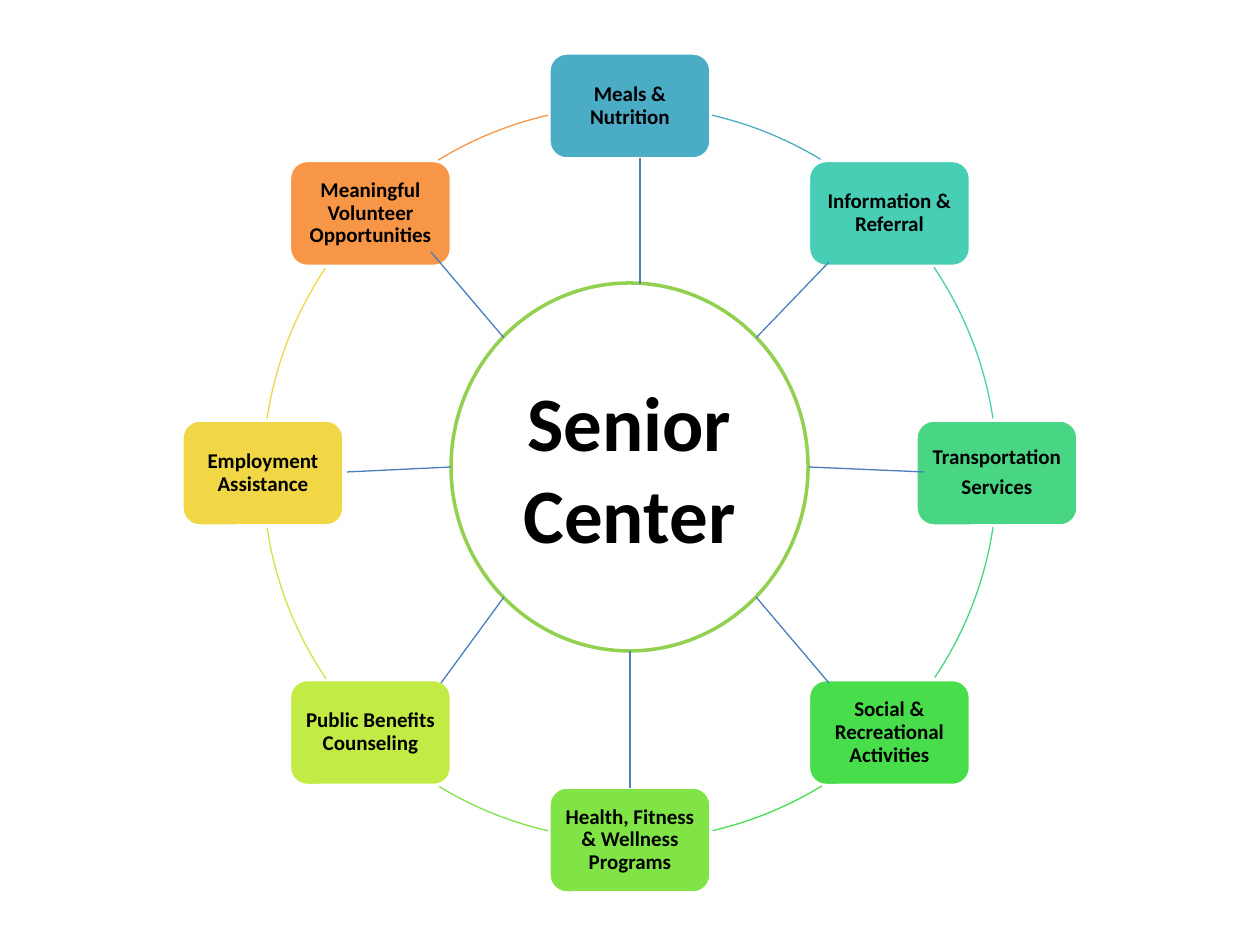
from math import cos, radians, sin

from lxml import etree
from pptx import Presentation
from pptx import util as u
from pptx.dml.color import RGBColor
from pptx.enum import shapes, text
from pptx.oxml.ns import qn

PX = u.Inches(1) / 126
theme = {
    "font": "Calibri", "ink": "000000", "paper": "FFFFFF",
    "ring": "92D050", "spoke": "4B7EBC",
    "hub": 44, "label": 12, "bold": 2, "thin": 0.75,
}
nodes = [
    ("4BACC6", ["Meals & Nutrition"]),
    ("49CEB6", ["Information & Referral"]),
    ("48D684", ["Transportation", "Services"]),
    ("47DD4B", ["Social & Recreational Activities"]),
    ("80E446", ["Health, Fitness & Wellness Programs"]),
    ("C3EB46", ["Public Benefits Counseling"]),
    ("F1D746", ["Employment Assistance"]),
    ("F79646", ["Meaningful Volunteer Opportunities"]),
]
gaps = [(12.9, 31.5), (10.9, 36.5), (8.5, 34.1), (13.5, 32.1)]
spokes = [
    (504, 338, 431, 252), (640, 158, 640, 284),
    (756, 338, 829, 262), (809, 467, 924, 472),
    (756, 597, 829, 683), (630, 651, 630, 788),
    (504, 597, 441, 683), (451, 467, 347, 472),
]
mid_x, mid_y, radius = 630, 473, 367
wide, high = 162, 106

deck = Presentation()
deck.slide_width, deck.slide_height = u.Inches(10), u.Inches(7.5)
slide = deck.slides.add_slide(deck.slide_layouts[6])


def draw(kind, x, y, w, h, fill, line, width):
    shape = slide.shapes.add_shape(kind, *(round(n * PX) for n in (x, y, w, h)))
    shape.shadow.inherit = False
    if fill:
        shape.fill.solid()
        shape.fill.fore_color.rgb = RGBColor.from_string(fill)
    else:
        shape.fill.background()
    shape.line.color.rgb = RGBColor.from_string(line)
    shape.line.width = u.Pt(width)
    return shape


def write(shape, lines, size):
    frame = shape.text_frame
    frame.word_wrap = True
    frame.vertical_anchor = text.MSO_ANCHOR.MIDDLE
    for i, line in enumerate(lines):
        para = frame.add_paragraph() if i else frame.paragraphs[0]
        para.alignment = text.PP_ALIGN.CENTER
        run = para.add_run()
        run.text = line
        run.font.name = theme["font"]
        run.font.size = u.Pt(size)
        run.font.bold = True
        run.font.color.rgb = RGBColor.from_string(theme["ink"])
    return frame


for i, (color, lines) in enumerate(nodes):
    angle = 45 * i - 90
    x = mid_x + radius * cos(radians(angle)) - wide / 2
    y = mid_y + radius * sin(radians(angle)) - high / 2
    box = draw(shapes.MSO_SHAPE.ROUNDED_RECTANGLE, x, y, wide, high,
               color, theme["paper"], theme["bold"])
    frame = write(box, lines, theme["label"])
    frame.margin_left = frame.margin_right = round(6 * PX)
    frame.margin_top = frame.margin_bottom = round(6 * PX)
    for para in frame.paragraphs:
        para.line_spacing = 0.9
        para.space_after = u.Pt(4.2)

    arc = draw(shapes.MSO_SHAPE.ARC, mid_x - radius, mid_y - radius,
               2 * radius, 2 * radius, None, color, theme["thin"])
    for k, gap in enumerate(gaps[i % 4]):
        arc.adjustments[k] = (angle + gap) % 360 * 0.6

hub = draw(shapes.MSO_SHAPE.FLOWCHART_CONNECTOR, 451, 283, 357, 368,
           theme["paper"], theme["ring"], theme["bold"])
write(hub, ["Senior Center"], theme["hub"])

for ends in spokes:
    spoke = slide.shapes.add_connector(
        shapes.MSO_CONNECTOR.STRAIGHT, *(round(n * PX) for n in ends))
    spoke.line.color.rgb = RGBColor.from_string(theme["spoke"])
    spoke.line.width = u.Pt(theme["thin"])
    etree.SubElement(spoke.element.spPr, qn("a:effectLst"))

deck.save("out.pptx")
